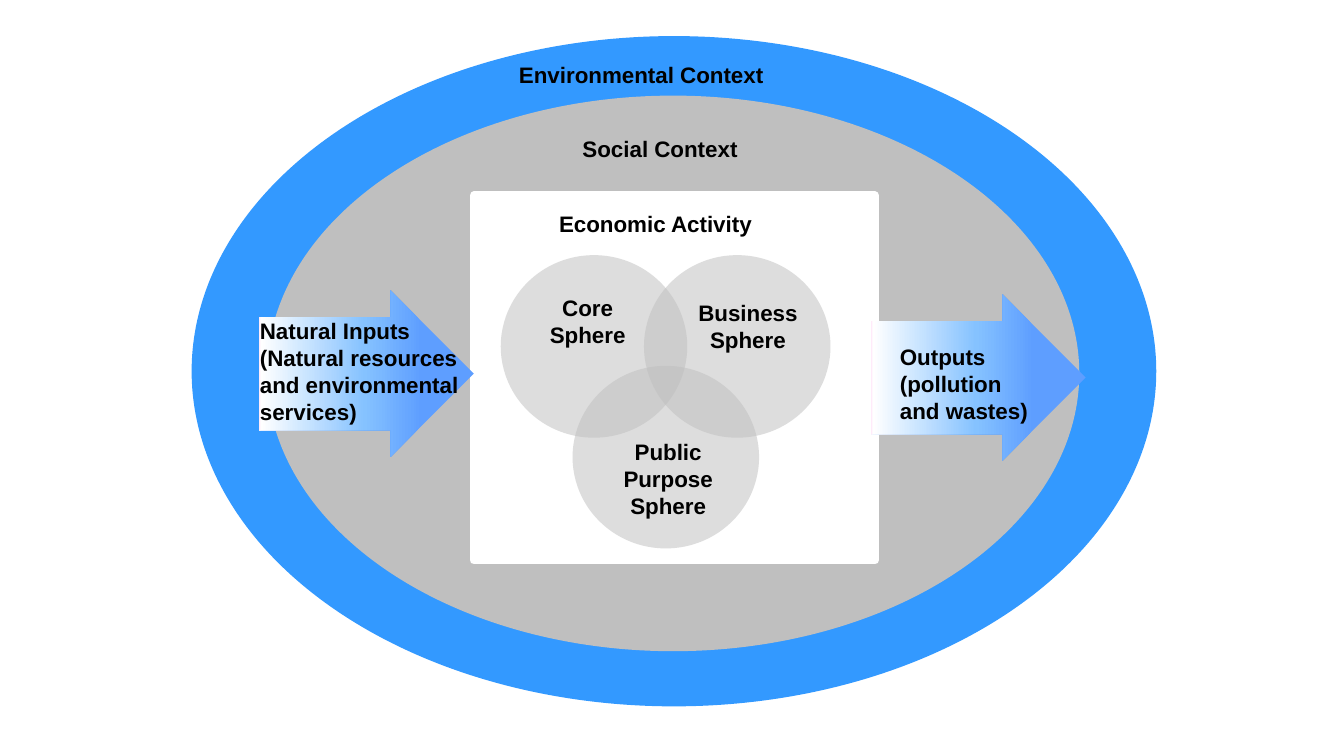
from lxml import etree
from pptx import Presentation
from pptx.dml.color import RGBColor
from pptx.enum import shapes as kinds, text as txt
from pptx.oxml import ns
from pptx.util import Cm, Pt

HUES = {
    "sea": "3399FF",
    "gray": "BFBFBF",
    "white": "FFFFFF",
    "ink": "000000",
    "blue": "5E9EFF",
    "sky": "85C2FF",
    "pink": "FFEBFA",
}
FADE = [(24, "blue"), (51, "sky"), (99, "white"), (100, "pink")]
OVAL = kinds.MSO_SHAPE.OVAL


def rgb(hue):
    return RGBColor.from_string(HUES[hue])


def add_form(slide, kind, box, hue):
    form = slide.shapes.add_shape(kind, *map(Cm, box))
    form.shadow.inherit = False
    form.fill.solid()
    form.fill.fore_color.rgb = rgb(hue)
    form.line.fill.background()
    return form


def add_panel(slide, box):
    panel = add_form(slide, kinds.MSO_SHAPE.RECTANGLE, box, "white")
    panel.line.color.rgb = rgb("white")
    panel.line.width = Pt(6)


def add_sphere(slide, left, top):
    """Add a see-through circle of the three-way overlap."""
    ball = add_form(slide, OVAL, (left, top, 4.7, 4.6), "gray")
    color = ball.fill._xPr.find(".//" + ns.qn("a:srgbClr"))
    etree.SubElement(color, ns.qn("a:alpha"), val="53000")


def add_arrow(slide, left, top):
    """Add a block arrow that fades from its blue tip to a white tail."""
    arrow = add_form(slide, kinds.MSO_SHAPE.RIGHT_ARROW,
                     (left, top, 5.41, 4.19), "blue")
    arrow.adjustments[0] = 0.68
    arrow.adjustments[1] = 0.5
    arrow.fill.gradient()
    arrow.fill.gradient_angle = 180
    stops = arrow.fill._xPr.find(".//" + ns.qn("a:gsLst"))
    for old in list(stops):
        stops.remove(old)
    for pos, hue in FADE:
        stop = etree.SubElement(stops, ns.qn("a:gs"), pos=str(pos * 1000))
        etree.SubElement(stop, ns.qn("a:srgbClr"), val=HUES[hue])


def add_label(slide, words, box, align=txt.PP_ALIGN.LEFT):
    frame = slide.shapes.add_textbox(*map(Cm, box)).text_frame
    frame.word_wrap = True
    frame.auto_size = txt.MSO_AUTO_SIZE.SHAPE_TO_FIT_TEXT
    para = frame.paragraphs[0]
    para.text = words
    para.alignment = align
    para.font.name = "Arial"
    para.font.size = Pt(16)
    para.font.bold = True
    para.font.color.rgb = rgb("ink")


def main():
    deck = Presentation()
    deck.slide_width, deck.slide_height = Cm(33.87), Cm(19.05)
    slide = deck.slides.add_slide(deck.slide_layouts[6])

    add_form(slide, OVAL, (4.83, 0.91, 24.31, 16.89), "sea")
    add_form(slide, OVAL, (6.73, 2.41, 20.47, 14), "gray")
    add_panel(slide, (11.94, 4.93, 10.11, 9.19))

    add_arrow(slide, 21.95, 7.42)
    add_arrow(slide, 6.53, 7.32)
    add_label(slide,
              "Natural Inputs (Natural resources and environmental services)",
              (6.3, 7.87, 5.6, 3))
    add_label(slide, "Outputs (pollution and wastes)",
              (22.43, 8.53, 4.04, 2.31))

    for words, left, top in [("Environmental Context", 12.83, 1.42),
                             ("Social Context", 14.43, 3.28),
                             ("Economic Activity", 13.84, 5.18)]:
        add_label(slide, words, (left, top, 8.89, 0.94))

    for left, top in [(12.62, 6.43), (16.23, 6.43), (14.43, 9.22)]:
        add_sphere(slide, left, top)
    for words, left, top, high in [("Core Sphere", 13.11, 7.29, 1.63),
                                   ("Business Sphere", 17.15, 7.42, 1.63),
                                   ("Public Purpose Sphere", 15.14, 10.92, 2.31)]:
        add_label(slide, words, (left, top, 3.4, high), txt.PP_ALIGN.CENTER)

    deck.save("out.pptx")


if __name__ == "__main__":
    main()
